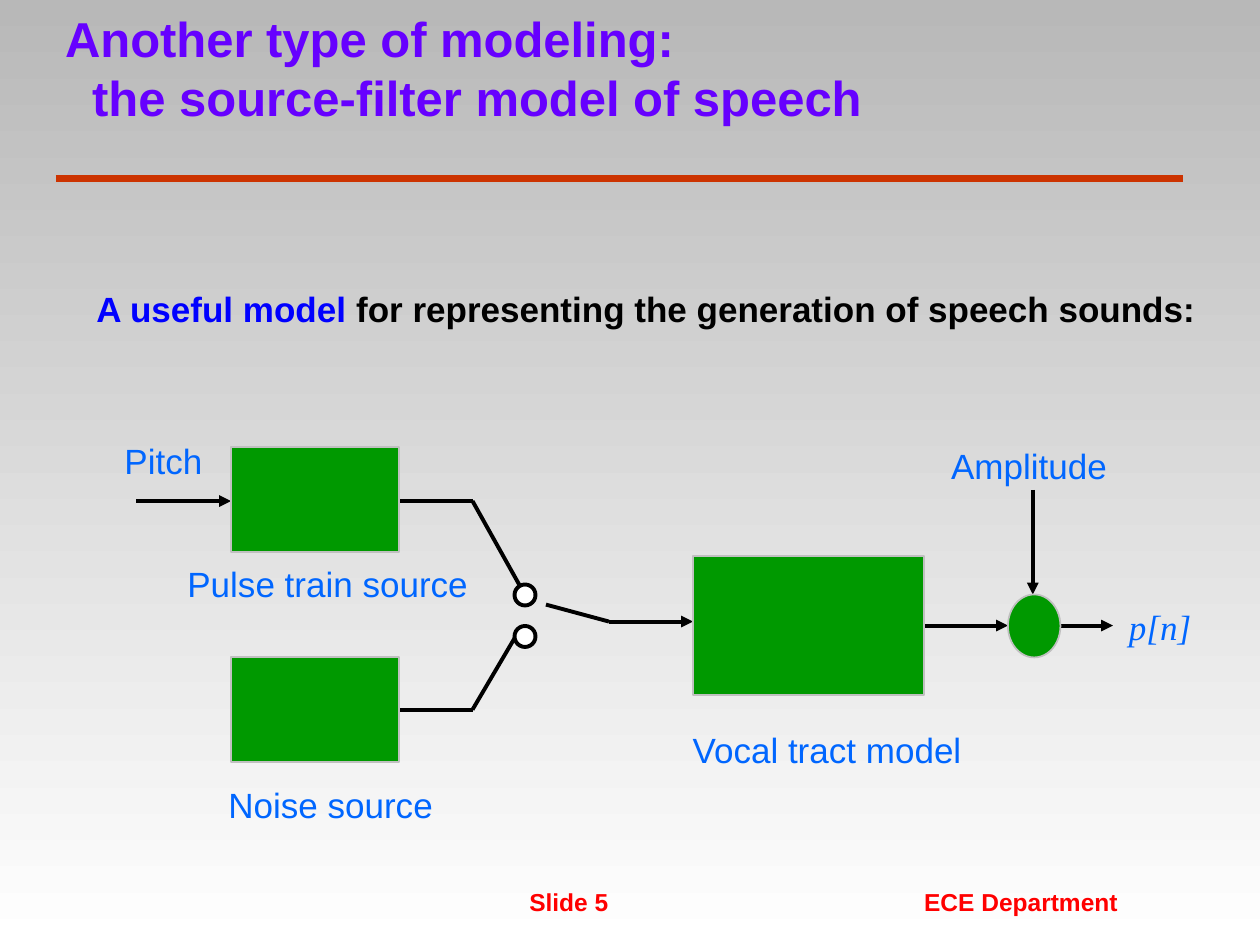
from itertools import pairwise

from lxml.etree import SubElement
from pptx import Presentation
from pptx.dml.color import RGBColor
from pptx.enum.shapes import MSO_CONNECTOR, MSO_SHAPE
from pptx.enum.text import MSO_ANCHOR, MSO_AUTO_SIZE, PP_ALIGN
from pptx.oxml.ns import qn
from pptx.util import Pt

COLORS = {
    "top": "B8B8B8", "bottom": "FFFFFF", "rule": "CC3300", "title": "6600FF",
    "accent": "0000FF", "ink": "000000", "label": "0066FF", "footer": "FF0000",
    "block": "009900", "edge": "C0C0C0", "white": "FFFFFF",
}

# Content: all lengths in points
TITLE = "Another type of modeling:\vthe source-filter model of speech"
STATEMENT = [("A useful model ", "accent"),
             ("for representing the generation of speech sounds:", "ink")]
FOOTER = "\tSlide 5\tECE Department"
FOOTER_TABS = (193.4, 419)

LABELS = [  # text, left, top, width, font, italic
    ("Pitch", 64, 247.7, 59, "Arial", False),
    ("Pulse train source", 100, 317.7, 194, "Arial", False),
    ("Noise source", 123.4, 444.4, 171, "Arial", False),
    ("Vocal tract model", 388.7, 413, 170, "Arial", False),
    ("Amplitude", 536.4, 250.4, 126, "Arial", False),
    ("p[n]", 638, 342.7, 60, "Times New Roman", True),
]
BLOCKS = [  # preset, left, top, width, height
    (MSO_SHAPE.RECTANGLE, 132, 255.5, 96, 60),
    (MSO_SHAPE.RECTANGLE, 132, 375.5, 96, 60),
    (MSO_SHAPE.RECTANGLE, 396, 317.7, 132, 79.3),
    (MSO_SHAPE.OVAL, 576, 339.7, 30, 36),
]
CONTACTS = [(294, 334), (294, 357.7)]
CONTACT_SIZE = 12
WIRES = [  # points along the wire, ends in an arrowhead
    ([(78, 286.3), (132, 286.3)], True),
    ([(228, 286.3), (270, 286.3), (300, 340)], False),
    ([(228, 405.5), (270, 405.5), (298, 358)], False),
    ([(312, 345.5), (348, 355.2), (396, 355.2)], True),
    ([(528, 357.5), (576, 357.5)], True),
    ([(590.2, 280), (590.2, 339.7)], True),
    ([(606, 357.5), (636, 357.5)], True),
]


def color(key):
    return RGBColor.from_string(COLORS[key])


def set_font(font, key, **values):
    font.color.rgb = color(key)
    for name, value in values.items():
        setattr(font, name, value)


def set_frame(frame, **values):
    for name, value in values.items():
        setattr(frame, name, value)


def add_text(slide, left, top, width, height):
    frame = slide.shapes.add_textbox(Pt(left), Pt(top), Pt(width), Pt(height)).text_frame
    frame.word_wrap = True
    return frame


def hang(paragraph, size):
    properties = paragraph._p.get_or_add_pPr()
    properties.set("marL", str(Pt(size)))
    properties.set("indent", str(-Pt(size)))


def add_line(slide, start, end, key="ink", width=2.25, arrow=False):
    line = slide.shapes.add_connector(
        MSO_CONNECTOR.STRAIGHT, *(Pt(value) for value in (*start, *end)))
    line.line.color.rgb = color(key)
    line.line.width = Pt(width)
    if arrow:
        SubElement(line.line._get_or_add_ln(), qn("a:tailEnd"), type="triangle")
    SubElement(line._element.spPr, qn("a:effectLst"))


def add_node(slide, preset, left, top, width, height, fill, edge, edge_width):
    node = slide.shapes.add_shape(preset, Pt(left), Pt(top), Pt(width), Pt(height))
    node.shadow.inherit = False
    node.fill.solid()
    node.fill.fore_color.rgb = color(fill)
    node.line.color.rgb = color(edge)
    node.line.width = Pt(edge_width)


def main():
    deck = Presentation()
    deck.slide_width, deck.slide_height = Pt(720), Pt(540)
    slide = deck.slides.add_slide(deck.slide_layouts[5])

    # Background
    background = slide.background.fill
    background.gradient()
    background.gradient_angle = 270
    for stop, key, position in zip(background.gradient_stops, ("top", "bottom"), (0, 1)):
        stop.color.rgb = color(key)
        stop.position = position

    # Title and rule
    title = slide.shapes.title
    title.left, title.top, title.width, title.height = Pt(30), Pt(24), Pt(648), Pt(48)
    set_frame(title.text_frame, text=TITLE, word_wrap=True, auto_size=MSO_AUTO_SIZE.NONE,
              vertical_anchor=MSO_ANCHOR.BOTTOM, margin_top=0, margin_bottom=0)
    heading = title.text_frame.paragraphs[0]
    heading.alignment = PP_ALIGN.LEFT
    hang(heading, 15.5)
    for run in heading.runs:
        set_font(run.font, "title", name="Arial", size=Pt(28), bold=True)
    add_line(slide, (32, 102), (676, 102), "rule", 4)

    # Statement
    statement = add_text(slide, 48, 160.5, 648, 32).paragraphs[0]
    hang(statement, 31)
    for text, key in STATEMENT:
        run = statement.add_run()
        run.text = text
        set_font(run.font, key, name="Arial", size=Pt(20), bold=True)

    # Source-filter diagram
    for points, has_arrow in WIRES:
        for start, end in pairwise(points):
            add_line(slide, start, end, arrow=has_arrow and end == points[-1])
    for block in BLOCKS:
        add_node(slide, *block, "block", "edge", 1)
    for left, top in CONTACTS:
        add_node(slide, MSO_SHAPE.OVAL, left, top, CONTACT_SIZE, CONTACT_SIZE,
                 "white", "ink", 2.25)
    for text, left, top, width, font, italic in LABELS:
        label = add_text(slide, left, top, width, 31)
        label.text = text
        set_font(label.paragraphs[0].runs[0].font, "label",
                 name=font, size=Pt(20), italic=italic)

    # Footer
    footer = add_text(slide, 102, 492.5, 582, 36)
    set_frame(footer, margin_top=Pt(14.2))
    line = footer.paragraphs[0]
    tabs = SubElement(line._p.get_or_add_pPr(), qn("a:tabLst"))
    for position in FOOTER_TABS:
        SubElement(tabs, qn("a:tab"), pos=str(Pt(position)), algn="l")
    run = line.add_run()
    run.text = FOOTER
    set_font(run.font, "footer", name="Arial", size=Pt(14), bold=True)

    deck.save("out.pptx")


if __name__ == "__main__":
    main()
